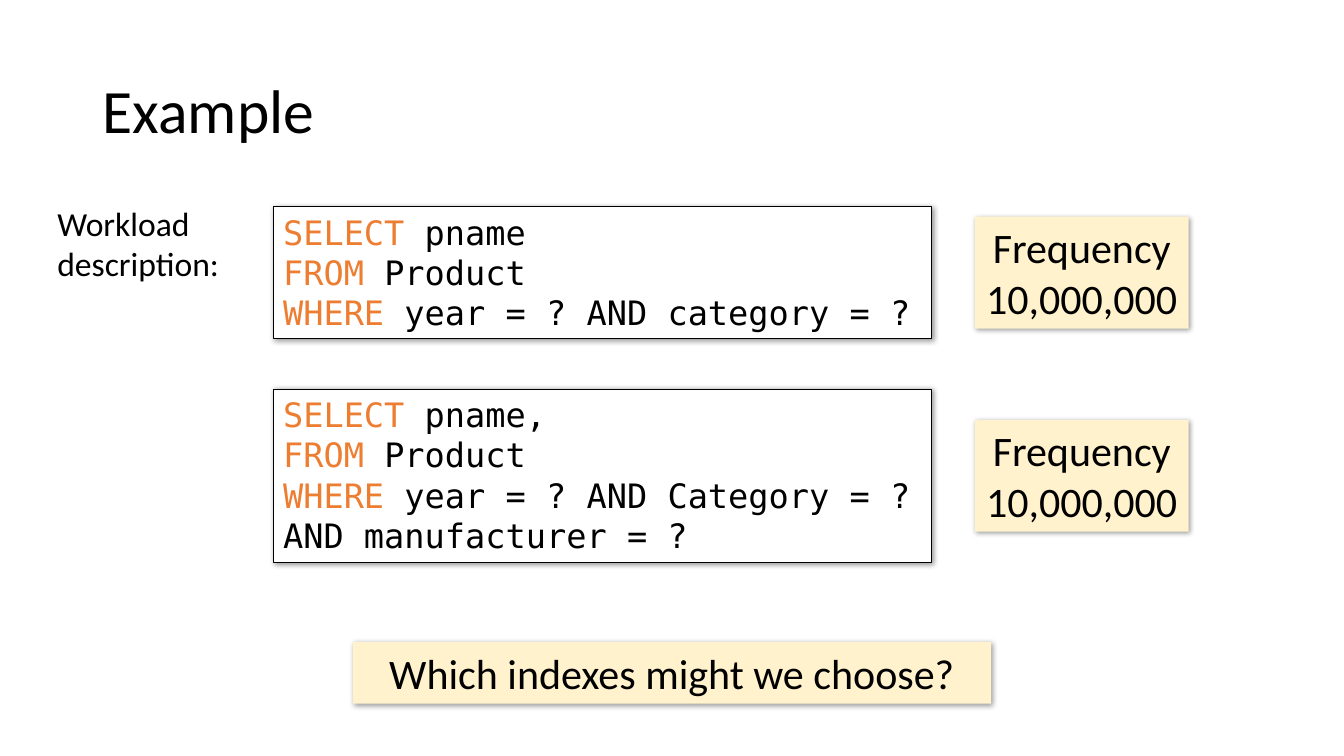
from dataclasses import dataclass

from lxml.etree import SubElement
from pptx import Presentation
from pptx.dml.color import RGBColor
from pptx.enum.shapes import MSO_SHAPE as Shape
from pptx.enum.text import MSO_ANCHOR as Anchor, MSO_AUTO_SIZE as AutoSize, PP_ALIGN as Align
from pptx.oxml.ns import qn
from pptx.util import Inches, Pt

TITLE = "Example"
LABEL = "Workload description:"
QUESTION = "Which indexes might we choose?"
KEYWORDS = {"SELECT", "FROM", "WHERE"}
# top, height, SQL lines, frequency
QUERIES = [
    (2.05, 1.31, ["SELECT pname", "FROM Product",
                  "WHERE year = ? AND category = ?"], "10,000,000"),
    (3.86, 1.72, ["SELECT pname,", "FROM Product",
                  "WHERE year = ? AND Category = ?",
                  "AND manufacturer = ?"], "10,000,000"),
]
QUERY_LEFT, QUERY_WIDTH = 2.71, 6.53
FREQUENCY_LEFT, FREQUENCY_WIDTH, FREQUENCY_HEIGHT = 9.67, 2.12, 1.11


@dataclass(frozen=True)
class Theme:
    text: RGBColor = RGBColor.from_string("000000")
    keyword: RGBColor = RGBColor.from_string("ED7D31")
    paper: RGBColor = RGBColor.from_string("FFFFFF")
    note: RGBColor = RGBColor.from_string("FFF2CC")
    body_font: str = "Calibri"
    code_font: str = "DejaVu Sans Mono"
    title_size: int = 44
    body_size: int = 24
    note_size: int = 30


THEME = Theme()


def style(paragraph, size, name=THEME.body_font):
    paragraph.font.size = Pt(size)
    paragraph.font.name = name
    paragraph.font.color.rgb = THEME.text


def add_shadow(shape):
    shape.shadow.inherit = False
    effects = shape._element.spPr.find(qn("a:effectLst"))
    shadow = SubElement(effects, qn("a:outerShdw"), blurRad=str(Pt(4)), dist=str(Pt(1)),
                        dir=str(45 * 60000), algn="tl", rotWithShape="0")
    color = SubElement(shadow, qn("a:srgbClr"), val=str(THEME.text))
    SubElement(color, qn("a:alpha"), val="40000")


def add_box(slide, left, top, width, height, fill):
    """Add a shadowed rectangle without a line."""
    box = slide.shapes.add_shape(Shape.RECTANGLE, *map(Inches, (left, top, width, height)))
    box.fill.solid()
    box.fill.fore_color.rgb = fill
    box.line.fill.background()
    add_shadow(box)
    frame = box.text_frame
    frame.word_wrap = True
    frame.auto_size = AutoSize.SHAPE_TO_FIT_TEXT
    frame.vertical_anchor = Anchor.TOP
    return box


def add_note(slide, left, top, width, height, text):
    box = add_box(slide, left, top, width, height, THEME.note)
    paragraph = box.text_frame.paragraphs[0]
    paragraph.text = text
    paragraph.alignment = Align.CENTER
    style(paragraph, THEME.note_size)


def add_query(slide, top, height, lines):
    box = add_box(slide, QUERY_LEFT, top, QUERY_WIDTH, height, THEME.paper)
    box.line.color.rgb = THEME.text
    box.line.width = Pt(0.75)
    frame = box.text_frame
    for index, line in enumerate(lines):
        paragraph = frame.paragraphs[0] if index == 0 else frame.add_paragraph()
        paragraph.alignment = Align.LEFT
        style(paragraph, THEME.body_size, THEME.code_font)
        first, space, rest = line.partition(" ")
        for text in (first, space + rest):
            run = paragraph.add_run()
            run.text = text
            run.font.color.rgb = THEME.keyword if text in KEYWORDS else THEME.text


def add_label(slide, left, top, width, height, text, size):
    frame = slide.shapes.add_textbox(*map(Inches, (left, top, width, height))).text_frame
    frame.word_wrap = True
    paragraph = frame.paragraphs[0]
    paragraph.text = text
    style(paragraph, size)
    return frame


def main():
    presentation = Presentation()
    presentation.slide_width, presentation.slide_height = Inches(13.33), Inches(7.5)
    slide = presentation.slides.add_slide(presentation.slide_layouts[6])

    title = add_label(slide, 0.92, 0.4, 11.5, 1.45, TITLE, THEME.title_size)
    title.vertical_anchor = Anchor.MIDDLE
    title.paragraphs[0].line_spacing = 0.9
    add_label(slide, 0.47, 1.96, 1.9, 0.91, LABEL, THEME.body_size)

    for top, height, lines, frequency in QUERIES:
        add_query(slide, top, height, lines)
        note_top = top + (height - FREQUENCY_HEIGHT) / 2
        add_note(slide, FREQUENCY_LEFT, note_top, FREQUENCY_WIDTH, FREQUENCY_HEIGHT,
                 f"Frequency\v{frequency}")
    add_note(slide, 3.5, 6.37, 6.33, 0.61, QUESTION)

    presentation.save("out.pptx")


if __name__ == "__main__":
    main()
